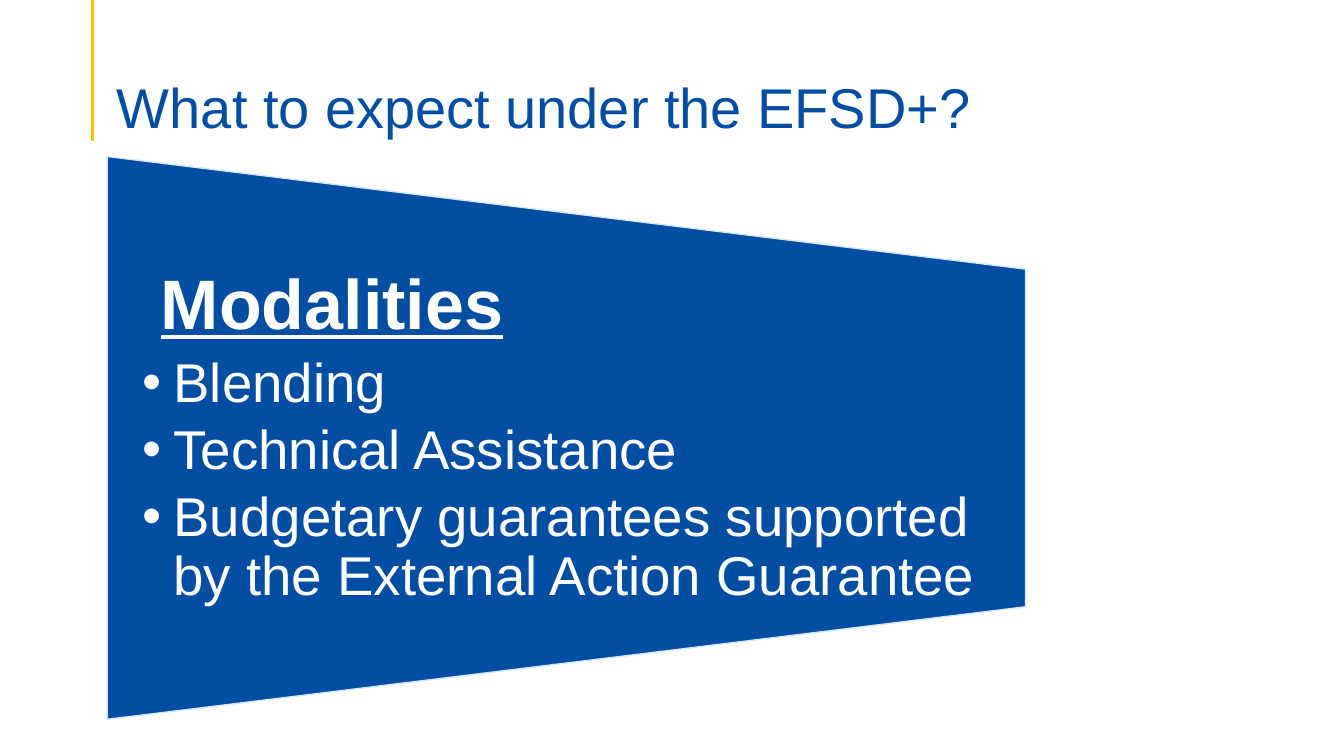
from dataclasses import dataclass

from lxml import etree
from pptx import Presentation
from pptx import util as u
from pptx.dml.color import RGBColor
from pptx.enum import shapes, text
from pptx.oxml import ns

COLORS = {"blue": "034EA2", "gold": "FFC000", "pale": "D3E8F9", "white": "FFFFFF"}
FONT = "Arial"


@dataclass(frozen=True)
class Line:
    words: str
    size: float
    color: str
    bold: bool = False
    underline: bool = False
    bullet: bool = False
    margin: float = 0
    after: float = 0


TITLE = [Line("What to expect under the EFSD+?", 40, "blue")]
MODALITIES = [
    Line("Modalities", 50, "white", bold=True, underline=True, margin=13.5, after=7.5),
    *(
        Line(words, 39, "white", bullet=True, margin=22.5, after=5.85)
        for words in (
            "Blending",
            "Technical Assistance",
            "Budgetary guarantees supported by the External Action Guarantee",
        )
    ),
]


def rgb(name: str) -> RGBColor:
    return RGBColor.from_string(COLORS[name])


def add_line(p, line: Line) -> None:
    pPr = p._p.get_or_add_pPr()
    pPr.set("marL", str(u.Pt(line.margin)))
    pPr.set("indent", str(-u.Pt(line.margin) if line.bullet else 0))
    p.line_spacing = 0.9
    p.space_after = u.Pt(line.after)
    if line.bullet:
        etree.SubElement(pPr, ns.qn("a:buFont"), typeface=FONT)
        etree.SubElement(pPr, ns.qn("a:buChar"), char="•")
    r = p.add_run()
    r.text = line.words
    r.font.name = FONT
    r.font.size = u.Pt(line.size)
    r.font.bold = line.bold
    r.font.underline = line.underline
    r.font.color.rgb = rgb(line.color)


def add_text(s, lines: list[Line], *, left: float, top: float, width: float, height: float,
             side: float, above: float = 0, anchor=text.MSO_ANCHOR.TOP) -> None:
    tf = s.shapes.add_textbox(u.Pt(left), u.Pt(top), u.Pt(width), u.Pt(height)).text_frame
    tf.word_wrap = True
    tf.vertical_anchor = anchor
    tf.margin_left = tf.margin_right = u.Pt(side)
    tf.margin_top, tf.margin_bottom = u.Pt(above), 0
    for i, line in enumerate(lines):
        add_line(tf.add_paragraph() if i else tf.paragraphs[0], line)


def add_rule(s, x: float, bottom: float) -> None:
    cx = s.shapes.add_connector(shapes.MSO_CONNECTOR.STRAIGHT, u.Pt(x), 0, u.Pt(x), u.Pt(bottom))
    cx.line.color.rgb = rgb("gold")
    cx.line.width = u.Pt(2.25)
    etree.SubElement(cx._element.spPr, ns.qn("a:effectLst"))


def add_panel(s, left: float, top: float, width: float, height: float) -> None:
    sp = s.shapes.add_shape(
        shapes.MSO_SHAPE.FLOWCHART_MANUAL_OPERATION,
        u.Pt(left + (width - height) / 2), u.Pt(top + (height - width) / 2),
        u.Pt(height), u.Pt(width),
    )
    sp.rotation = 270
    sp.shadow.inherit = False
    sp.fill.solid()
    sp.fill.fore_color.rgb = rgb("blue")
    sp.line.color.rgb = rgb("pale")
    sp.line.width = u.Pt(1)


def main() -> None:
    prs = Presentation()
    prs.slide_width, prs.slide_height = u.Pt(960), u.Pt(540)
    s = prs.slides.add_slide(prs.slide_layouts[6])
    add_rule(s, 66.2, 100.8)
    add_text(s, TITLE, left=76.5, top=38.2, width=828, height=62, side=7.2, above=3.6,
             anchor=text.MSO_ANCHOR.BOTTOM)
    add_panel(s, 76.5, 111.8, 656, 402)
    add_text(s, MODALITIES, left=76.5, top=192.2, width=656, height=241.2, side=25)
    prs.save("out.pptx")


if __name__ == "__main__":
    main()
